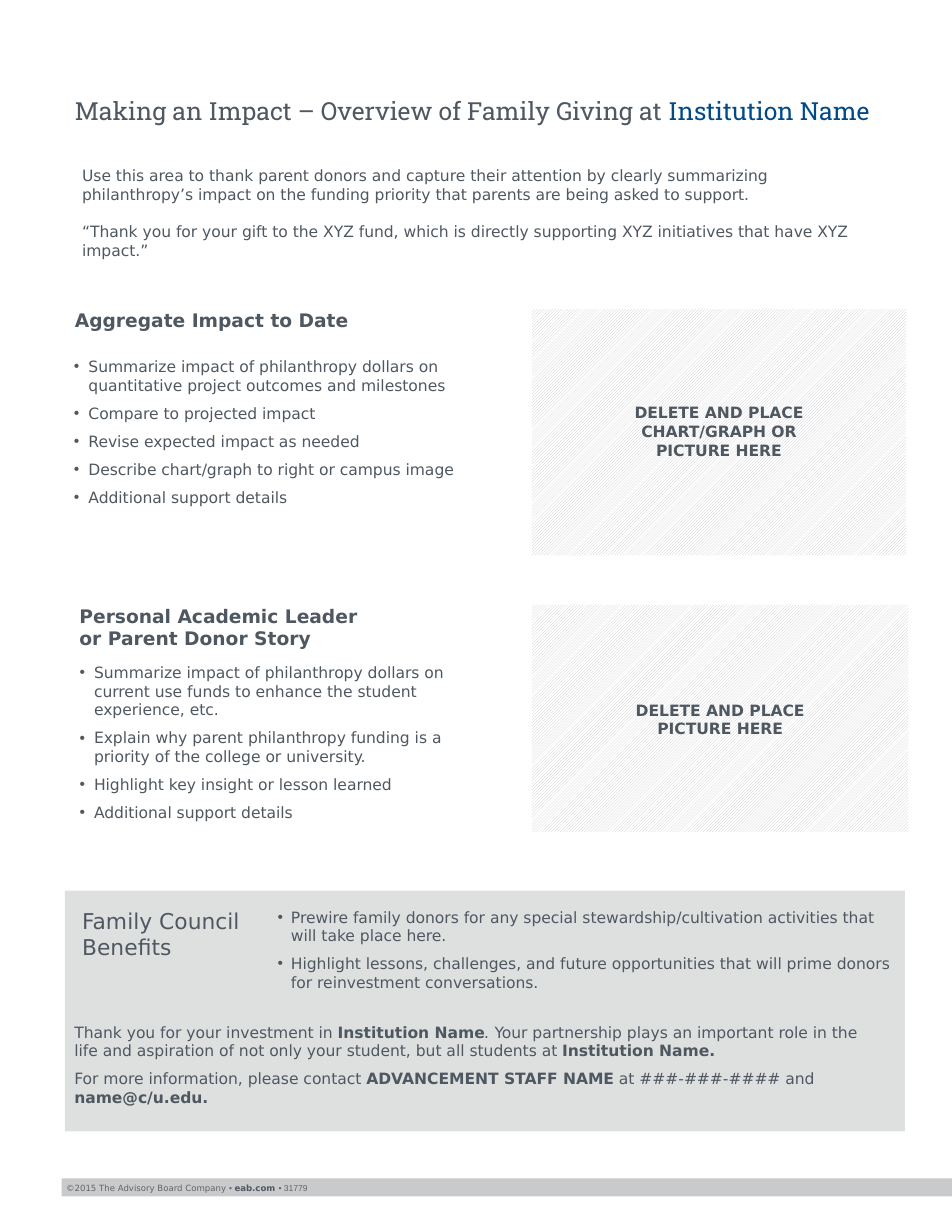
"""Builds a one-page family giving overview with impact, story and benefits sections."""
from lxml import etree
from pptx import Presentation
from pptx import util as u
from pptx.dml.color import RGBColor
from pptx.enum import dml, shapes, text
from pptx.oxml.ns import qn

COLORS = {
    "white": "FFFFFF",
    "slate": "4F5861",
    "blue": "004A88",
    "footer_text": "616569",
    "footer_bar": "C8CACC",
    "panel": "DEE0E0",
}
BODY_FONT = "DejaVu Sans"
BOLD = {"bold": True}


def color(name):
    """Return the named palette colour."""
    return RGBColor.from_string(COLORS[name])


def points(box):
    """Convert a box of point values to lengths."""
    return [u.Pt(value) for value in box]


def add_rectangle(slide, box, fill, patterned=False):
    """Add a borderless rectangle with a solid or diagonal hatch fill."""
    shape = slide.shapes.add_shape(shapes.MSO_SHAPE.RECTANGLE, *points(box))
    shape.shadow.inherit = False
    shape.line.fill.background()
    if patterned:
        shape.fill.patterned()
        shape.fill.pattern = dml.MSO_PATTERN.LIGHT_UPWARD_DIAGONAL
        shape.fill.fore_color.rgb = color(fill)
        shape.fill.back_color.rgb = color("white")
    else:
        shape.fill.solid()
        shape.fill.fore_color.rgb = color(fill)
    return shape


def add_bullet(paragraph, indent):
    """Give a paragraph a round bullet with a hanging indent."""
    properties = paragraph._p.get_or_add_pPr()
    properties.set("marL", str(u.Pt(indent)))
    properties.set("indent", str(-u.Pt(indent)))
    etree.SubElement(properties, qn("a:buFont")).set("typeface", "Arial")
    etree.SubElement(properties, qn("a:buChar")).set("char", "•")


def add_run(paragraph, words, size, font=BODY_FONT, ink="slate", bold=False, italic=False):
    """Add formatted words, turning newlines into line breaks."""
    for index, line in enumerate(words.split("\n")):
        if index:
            paragraph.add_line_break()
        run = paragraph.add_run()
        run.text = line
        run.font.size = u.Pt(size)
        run.font.name = font
        run.font.bold = bold
        run.font.italic = italic
        run.font.color.rgb = color(ink)


def add_text(slide, box, paragraphs, size=10, gap=0, indent=0, centered=False, **style):
    """Add a text box; each paragraph is a string or a list of (words, style) runs."""
    shape = slide.shapes.add_textbox(*points(box))
    frame = shape.text_frame
    frame.word_wrap = True
    frame.margin_left = frame.margin_top = frame.margin_right = frame.margin_bottom = 0
    if centered:
        frame.vertical_anchor = text.MSO_ANCHOR.MIDDLE
    for index, content in enumerate(paragraphs):
        paragraph = frame.add_paragraph() if index else frame.paragraphs[0]
        if indent:
            add_bullet(paragraph, indent)
        if centered:
            paragraph.alignment = text.PP_ALIGN.CENTER
        if index and gap:
            paragraph.space_before = u.Pt(gap)
        runs = [(content, {})] if isinstance(content, str) else content
        for words, changes in runs:
            add_run(paragraph, words, **{"size": size, **style, **changes})
    return shape


def add_picture_area(slide, box, label_box, label):
    """Add a hatched area with a centred bold instruction."""
    add_rectangle(slide, box, "footer_bar", patterned=True)
    add_text(slide, label_box, [label], centered=True, bold=True)


def add_section(slide, heading_box, heading, list_box, items):
    """Add a bold heading with a bullet list."""
    add_text(slide, heading_box, heading, size=12, bold=True)
    add_text(slide, list_box, items, gap=6, indent=9.36)


def add_footer(slide):
    """Add the grey footer bar and its copyright line."""
    add_rectangle(slide, (39.6, 757.6, 572.4, 11.5), "footer_bar")
    add_text(slide, (42.5, 760.3, 194.4, 6.5), [[
        ("©2015 The Advisory Board Company ", {}),
        ("• ", {"font": "Arial"}),
        ("eab.com ", {"ink": "slate", "bold": True}),
        ("• 31779", {"font": "Arial"}),
    ]], size=5.5, ink="footer_text")


def add_benefits(slide):
    """Add the grey panel with council benefits and contact details."""
    add_rectangle(slide, (41.8, 572.6, 540, 154.8), "panel")
    add_text(slide, (47.8, 657.4, 517, 54.7), [
        [
            ("Thank you for your investment in ", {}),
            ("Institution Name", BOLD),
            (". ", {"italic": True}),
            ("Your partnership plays an important role in the life and aspiration "
             "of not only your student, but all students at ", {}),
            ("Institution Name.", BOLD),
        ],
        [
            ("For more information, please contact ", {}),
            ("ADVANCEMENT STAFF NAME", BOLD),
            (" at ###-###-#### and ", {}),
            ("name@c/u.edu.", BOLD),
        ],
    ], gap=6)
    add_text(slide, (52.8, 583.4, 113, 33.8), ["Family Council Benefits"], size=14)
    add_text(slide, (178.4, 583.4, 394, 54.7), [
        "Prewire family donors for any special stewardship/cultivation activities "
        "that will take place here.",
        "Highlight lessons, challenges, and future opportunities that will prime "
        "donors for reinvestment conversations.",
    ], gap=6, indent=8.64)


def main():
    """Build and save the page."""
    presentation = Presentation()
    presentation.slide_width = u.Pt(612)
    presentation.slide_height = u.Pt(792)
    slide = presentation.slides.add_slide(presentation.slide_layouts[6])

    add_footer(slide)
    add_text(slide, (48.2, 61.2, 521.3, 19.4), [[
        ("Making an Impact – Overview of Family Giving at ", {}),
        ("Institution Name", {"ink": "blue"}),
    ]], size=16, font="Roboto Slab")
    add_text(slide, (52.8, 106.6, 512, 60.5), [
        "Use this area to thank parent donors and capture their attention by clearly "
        "summarizing philanthropy’s impact on the funding priority that parents are "
        "being asked to support.",
        "“Thank you for your gift to the XYZ fund, which is directly supporting XYZ "
        "initiatives that have XYZ impact.”",
    ], gap=12)

    add_section(slide, (48.2, 198.7, 261.4, 14.4), ["Aggregate Impact to Date"],
                (47.5, 229.7, 262, 121), [
        "Summarize impact of philanthropy dollars on quantitative project outcomes "
        "and milestones",
        "Compare to projected impact",
        "Revise expected impact as needed",
        "Describe chart/graph to right or campus image",
        "Additional support details",
    ])
    add_picture_area(slide, (342, 198.7, 240.5, 158.4), (393.8, 259.2, 136.8, 36),
                     "DELETE AND PLACE\nCHART/GRAPH OR PICTURE HERE")

    add_section(slide, (51.1, 388.8, 266.4, 28.8),
                ["Personal Academic Leader", "or Parent Donor Story"],
                (51.1, 426.2, 267, 133.2), [
        "Summarize impact of philanthropy dollars on current use funds to enhance "
        "the student experience, etc.",
        "Explain why parent philanthropy funding is a priority of the college or university.",
        "Highlight key insight or lesson learned",
        "Additional support details",
    ])
    add_picture_area(slide, (342, 388.8, 241.9, 146.2), (388.8, 452.2, 148.3, 20.2),
                     "DELETE AND PLACE\nPICTURE HERE")

    add_benefits(slide)
    presentation.save("out.pptx")


if __name__ == "__main__":
    main()
